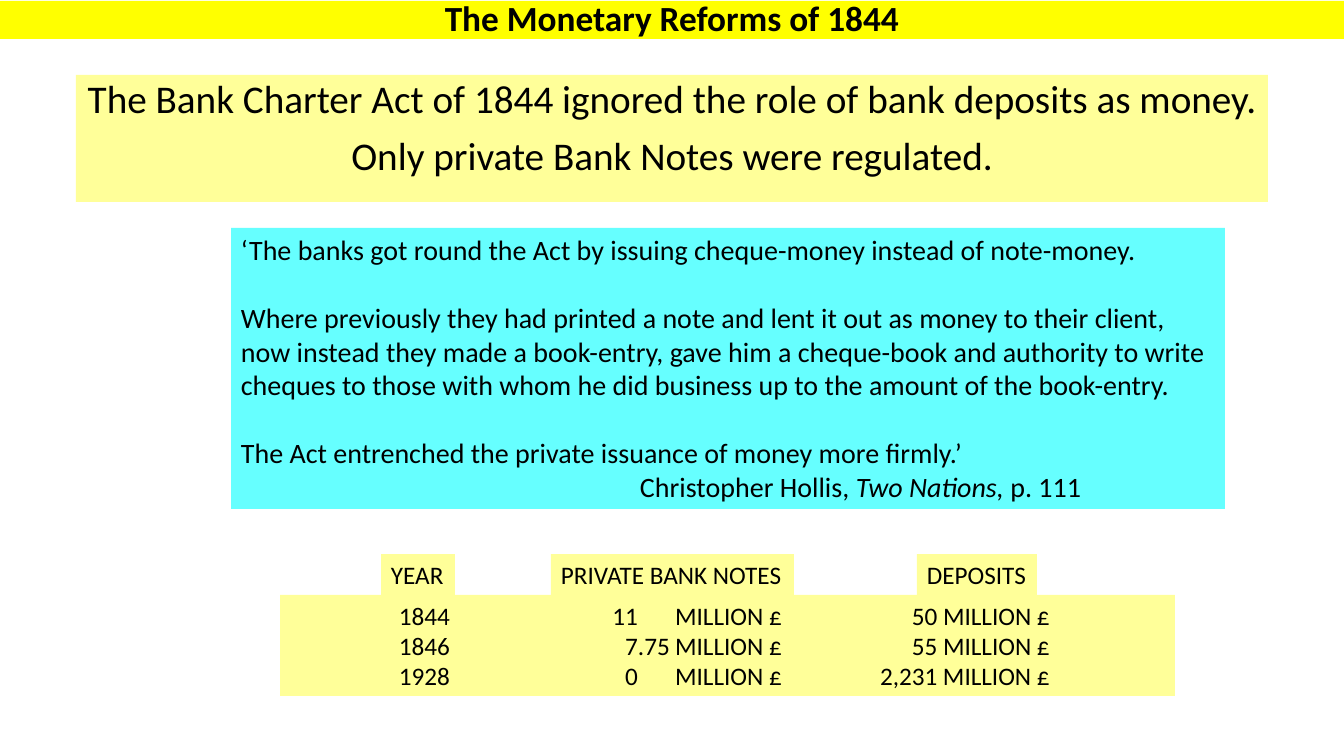
from dataclasses import dataclass

from lxml.etree import SubElement
from pptx import Presentation
from pptx.dml.color import RGBColor
from pptx.enum.text import MSO_ANCHOR, PP_ALIGN
from pptx.oxml.ns import qn
from pptx.slide import Slide
from pptx.util import Emu, Pt

EMU_PER_PX = 914400 / 100.8
FONT = "Calibri"
BLACK, YELLOW, PALE_YELLOW, CYAN = "000000", "FFFF00", "FFFF99", "66FFFF"


@dataclass(frozen=True)
class Words:
    text: str
    italic: bool = False


@dataclass(frozen=True)
class Line:
    words: tuple[Words, ...]
    before: float = 0
    indent: int = 0


@dataclass(frozen=True)
class Panel:
    left: int
    top: int
    width: int
    height: int
    fill: str
    size: float
    lines: tuple[Line, ...]
    align: PP_ALIGN = PP_ALIGN.LEFT
    anchor: MSO_ANCHOR = MSO_ANCHOR.TOP
    spacing: float = 1.0
    bold: bool = False
    wrap: bool = True
    tabs: tuple[tuple[int, str], ...] = ()


def px(length: int) -> Emu:
    return Emu(round(length * EMU_PER_PX))


def colour(value: str) -> RGBColor:
    return RGBColor.from_string(value)


def line(text: str, before: float = 0) -> Line:
    return Line((Words(text),), before)


def draw_panel(slide: Slide, panel: Panel) -> None:
    box = slide.shapes.add_textbox(
        px(panel.left), px(panel.top), px(panel.width), px(panel.height)
    )
    box.fill.solid()
    box.fill.fore_color.rgb = colour(panel.fill)
    frame = box.text_frame
    frame.word_wrap = panel.wrap
    frame.vertical_anchor = panel.anchor
    for index, content in enumerate(panel.lines):
        paragraph = frame.add_paragraph() if index else frame.paragraphs[0]
        paragraph.alignment = panel.align
        paragraph.line_spacing = panel.spacing
        paragraph.space_before = Pt(content.before)
        properties = paragraph._p.get_or_add_pPr()
        if content.indent:
            properties.set("marL", str(px(content.indent)))
        if panel.tabs:
            stops = SubElement(properties, qn("a:tabLst"))
            for position, kind in panel.tabs:
                SubElement(stops, qn("a:tab"), pos=str(px(position)), algn=kind)
        for words in content.words:
            run = paragraph.add_run()
            run.text = words.text
            run.font.name = FONT
            run.font.size = Pt(panel.size)
            run.font.bold = panel.bold
            run.font.italic = words.italic
            run.font.color.rgb = colour(BLACK)


# Title and main statement
TITLE = Panel(
    0, 1, 1344, 38, YELLOW, 25.2, (line("The Monetary Reforms of 1844"),),
    align=PP_ALIGN.CENTER, anchor=MSO_ANCHOR.MIDDLE, spacing=0.9, bold=True,
)
STATEMENT = Panel(
    76, 75, 1192, 127, PALE_YELLOW, 28,
    (
        line("The Bank Charter Act of 1844 ignored the role of bank deposits as money.", 10),
        line("Only private Bank Notes were regulated.", 10),
    ),
    align=PP_ALIGN.CENTER, spacing=0.9,
)

# Quotation with its source
QUOTE_GAP = 24.4
QUOTATION = Panel(
    231, 228, 994, 281, CYAN, 20,
    (
        line("‘The banks got round the Act by issuing cheque-money instead of note-money."),
        line("Where previously they had printed a note and lent it out as money to their client,", QUOTE_GAP),
        line("now instead they made a book-entry, gave him a cheque-book and authority to write"),
        line("cheques to those with whom he did business up to the amount of the book-entry."),
        line("The Act entrenched the private issuance of money more firmly.’", QUOTE_GAP),
        Line(
            (Words("Christopher Hollis, "), Words("Two Nations, ", italic=True), Words("p. 111")),
            indent=399,
        ),
    ),
)

# Column headings: text, left, width
HEADINGS = (("YEAR", 381, 74), ("PRIVATE BANK NOTES", 551, 243), ("DEPOSITS", 917, 120))

# Figures in millions: year, notes, deposits
FIGURES = (("1844", "11", "50"), ("1846", "7.75", "55"), ("1928", "0", "2,231"))
FIGURES_PANEL = Panel(
    280, 595, 895, 101, PALE_YELLOW, 18,
    tuple(
        line(f"\t{year}\t{notes}\tMILLION £\t{deposits} MILLION £")
        for year, notes, deposits in FIGURES
    ),
    tabs=((109, "l"), (348, "dec"), (492, "r"), (760, "r")),
)


def main() -> None:
    deck = Presentation()
    deck.slide_width, deck.slide_height = px(1344), px(756)
    slide = deck.slides.add_slide(deck.slide_layouts[6])
    headings = [
        Panel(left, 554, width, 41, PALE_YELLOW, 18, (line(text),), wrap=False)
        for text, left, width in HEADINGS
    ]
    for panel in (TITLE, STATEMENT, QUOTATION, *headings, FIGURES_PANEL):
        draw_panel(slide, panel)
    deck.save("out.pptx")


if __name__ == "__main__":
    main()
